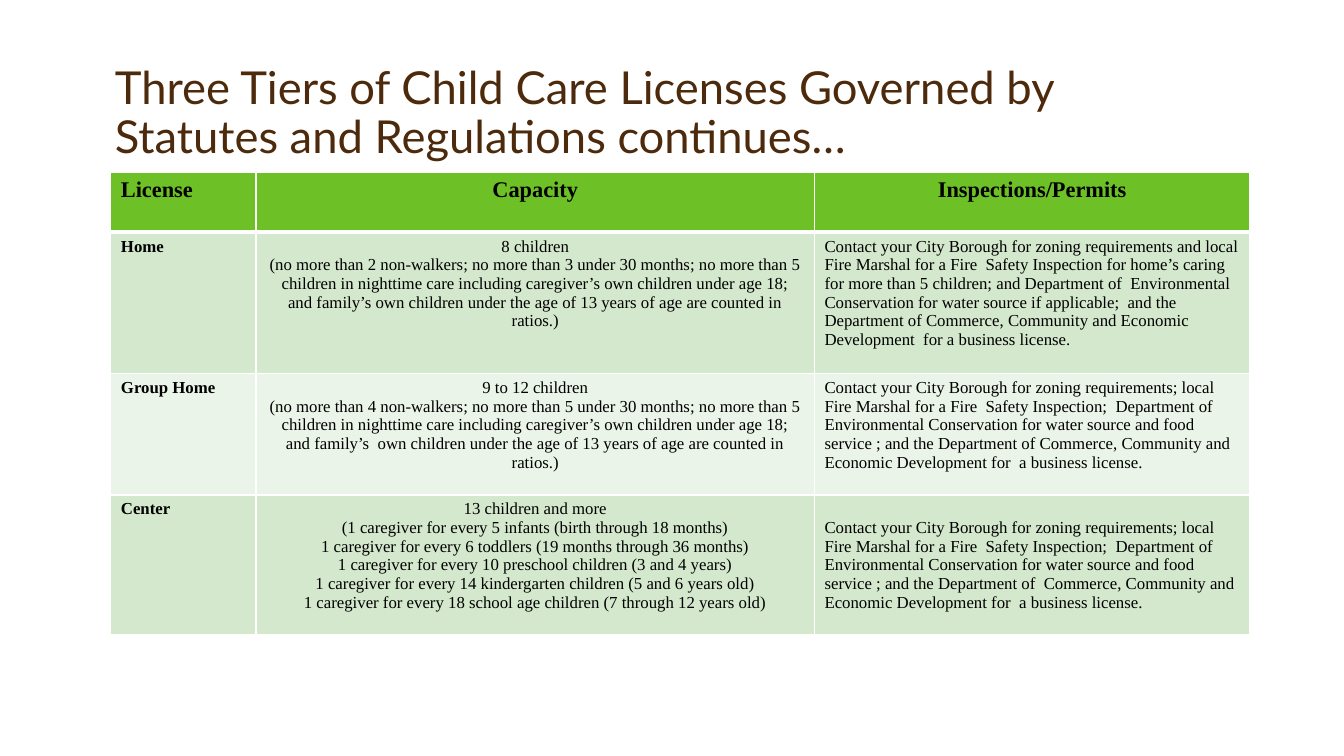
from lxml import etree
from pptx import Presentation
from pptx import util as u
from pptx.dml.color import RGBColor
from pptx.enum import text
from pptx.oxml.ns import qn

LEFT, CENTER = text.PP_ALIGN.LEFT, text.PP_ALIGN.CENTER


def style(font, color, **values):
    font.color.rgb = RGBColor.from_string(color)
    for name, value in values.items():
        setattr(font, name, value)


def add_borders(cell, color, widths):
    """Draw cell edges; widths maps edge tags to points."""
    properties = cell._tc.get_or_add_tcPr()
    for index, (edge, width) in enumerate(widths.items()):
        line = etree.Element(qn(f"a:{edge}"), w=str(u.Pt(width)))
        fill = etree.SubElement(line, qn("a:solidFill"))
        etree.SubElement(fill, qn("a:srgbClr"), val=color)
        properties.insert(index, line)


deck = Presentation()
deck.slide_width, deck.slide_height = u.Pt(960), u.Pt(540)
page = deck.slides.add_slide(deck.slide_layouts[6])

title = page.shapes.add_textbox(u.Pt(75), u.Pt(24), u.Pt(801), u.Pt(96)).text_frame
title.word_wrap = True
title.vertical_anchor = text.MSO_ANCHOR.BOTTOM
title.text = "Three Tiers of Child Care Licenses Governed by Statutes and Regulations continues…"
title.paragraphs[0].line_spacing = 0.9
style(title.paragraphs[0].runs[0].font, "4D2A0B", name="Lato", size=u.Pt(32.4))

# Each cell is a list of paragraphs.
licenses = [
    [["License"], ["Capacity"], ["Inspections/Permits"]],
    [
        ["Home"],
        [
            "8 children",
            "(no more than 2 non-walkers; no more than 3 under 30 months; no more than 5 "
            "children in nighttime care including caregiver’s own children under age 18;",
            "and family’s own children under the age of 13 years of age are counted in ratios.)",
        ],
        [
            "Contact your City Borough for zoning requirements and local Fire Marshal for a "
            "Fire  Safety Inspection for home’s caring for more than 5 children; and Department "
            "of  Environmental Conservation for water source if applicable;  and the  Department "
            "of Commerce, Community and Economic Development  for a business license."
        ],
    ],
    [
        ["Group Home"],
        [
            "9 to 12 children",
            "(no more than 4 non-walkers; no more than 5 under 30 months; no more than 5 "
            "children in nighttime care including caregiver’s own children under age 18;",
            "and family’s  own children under the age of 13 years of age are counted in ratios.)",
        ],
        [
            "Contact your City Borough for zoning requirements; local Fire Marshal for a "
            "Fire  Safety Inspection;  Department of  Environmental Conservation for water "
            "source and food service ; and the Department of Commerce, Community and "
            "Economic Development for  a business license."
        ],
    ],
    [
        ["Center"],
        [
            "13 children and more",
            "(1 caregiver for every 5 infants (birth through 18 months)",
            "1 caregiver for every 6 toddlers (19 months through 36 months)",
            "1 caregiver for every 10 preschool children (3 and 4 years)",
            "1 caregiver for every 14 kindergarten children (5 and 6 years old)",
            "1 caregiver for every 18 school age children (7 through 12 years old)",
        ],
        [
            "Contact your City Borough for zoning requirements; local Fire Marshal for a "
            "Fire  Safety Inspection;  Department of  Environmental Conservation for water "
            "source and food service ; and the Department of  Commerce, Community and "
            "Economic Development for  a business license."
        ],
    ],
]
column_widths = [103.7, 398.9, 311]
row_heights = [42.8, 101, 86.8, 100]
row_fills = ["6DC025", "D4E8CD", "EBF4E8", "D4E8CD"]

table = page.shapes.add_table(
    len(row_heights), len(column_widths), u.Pt(79.2), u.Pt(123),
    u.Pt(sum(column_widths)), u.Pt(sum(row_heights)),
).table
for column, width in zip(table.columns, column_widths):
    column.width = u.Pt(width)
for row, height in zip(table.rows, row_heights):
    row.height = u.Pt(height)

for r, cells in enumerate(licenses):
    for c, lines in enumerate(cells):
        cell = table.cell(r, c)
        cell.fill.solid()
        cell.fill.fore_color.rgb = RGBColor.from_string(row_fills[r])
        add_borders(cell, "FFFFFF", {
            "lnL": 1, "lnR": 1, "lnT": 3 if r == 1 else 1, "lnB": 3 if r == 0 else 1,
        })
        cell.text_frame.text = "\n".join(lines)
        for para in cell.text_frame.paragraphs:
            para.alignment = CENTER if c == 1 or (r == 0 and c == 2) else LEFT
            style(para.runs[0].font, "000000", name="Times New Roman",
                  size=u.Pt(16 if r == 0 else 12), bold=r == 0 or c == 0)

# The center's permits start level with the second line of its capacity.
table.cell(3, 2).margin_top = u.Pt(16.9)

deck.save("out.pptx")
